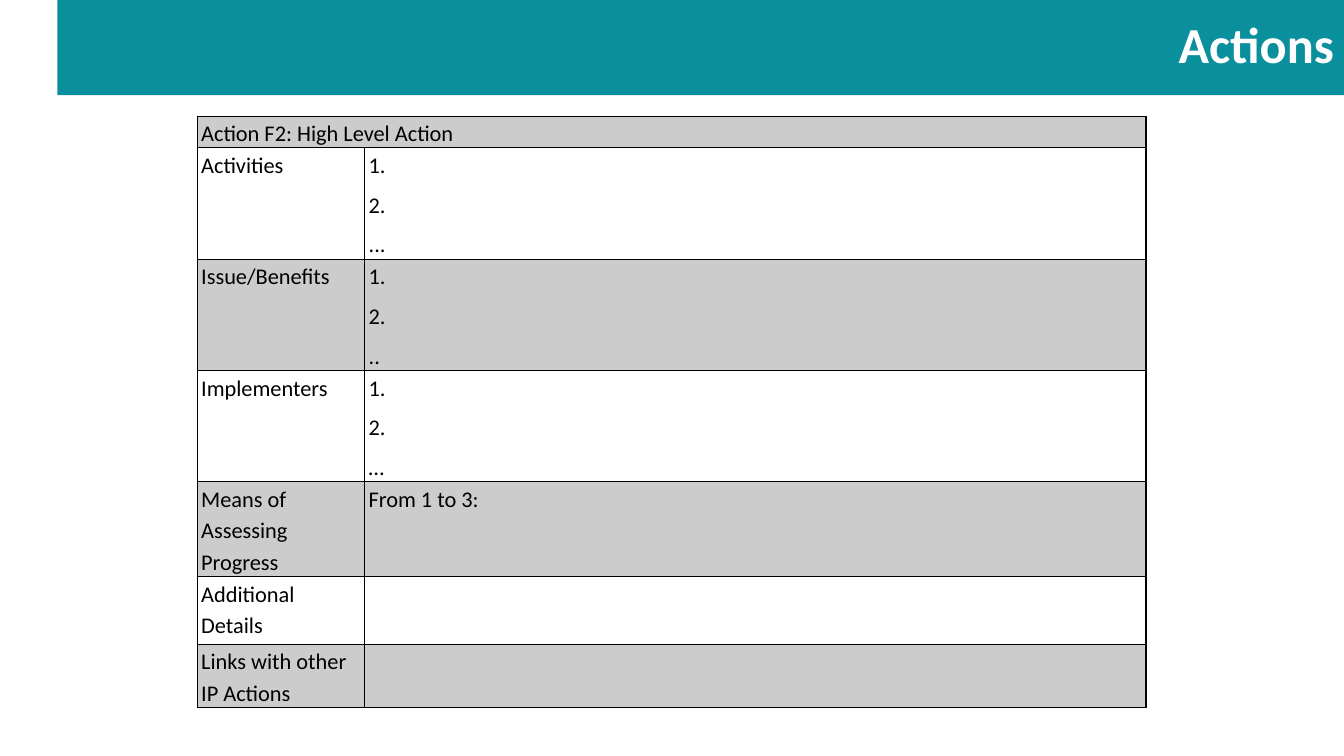
from dataclasses import dataclass

from lxml.etree import SubElement
from pptx import Presentation
from pptx.dml.color import RGBColor
from pptx.enum.shapes import MSO_SHAPE
from pptx.enum.text import MSO_ANCHOR, PP_ALIGN
from pptx.oxml.ns import qn
from pptx.util import Cm, Pt


@dataclass(frozen=True)
class Theme:
    font: str = "Calibri"
    banner: str = "0A8F9D"
    title: str = "FFFFFF"
    ink: str = "000000"
    shade_opacity: int = 20
    title_size: int = 36
    body_size: int = 16
    border_width: int = 1


@dataclass(frozen=True)
class Entry:
    lines: tuple = ()
    align: PP_ALIGN = PP_ALIGN.JUSTIFY
    before: int = 3
    after: int = 3


def label(text):
    return Entry((text,), PP_ALIGN.LEFT, after=0)


class SlideBuilder:
    def __init__(self, slide, theme):
        self.slide = slide
        self.theme = theme

    def add_run(self, paragraph, text, size, color, bold=False):
        run = paragraph.add_run()
        run.text = text
        run.font.name = self.theme.font
        run.font.size = Pt(size)
        run.font.bold = bold
        run.font.color.rgb = RGBColor.from_string(color)

    def add_banner(self, text, left, top, width, height):
        shape = self.slide.shapes.add_shape(
            MSO_SHAPE.RECTANGLE, Cm(left), Cm(top), Cm(width), Cm(height))
        shape.shadow.inherit = False
        shape.fill.solid()
        shape.fill.fore_color.rgb = RGBColor.from_string(self.theme.banner)
        shape.line.fill.background()
        shape.text_frame.vertical_anchor = MSO_ANCHOR.MIDDLE
        paragraph = shape.text_frame.paragraphs[0]
        paragraph.alignment = PP_ALIGN.RIGHT
        paragraph.line_spacing = 0.9
        self.add_run(paragraph, text, self.theme.title_size, self.theme.title, True)

    def add_borders(self, cell):
        properties = cell._tc.get_or_add_tcPr()
        for side in ("a:lnL", "a:lnR", "a:lnT", "a:lnB"):
            line = SubElement(properties, qn(side), w=str(Pt(self.theme.border_width)))
            fill = SubElement(line, qn("a:solidFill"))
            SubElement(fill, qn("a:srgbClr"), val=self.theme.ink)

    def fill_cell(self, cell, shaded):
        if not shaded:
            cell.fill.background()
            return
        cell.fill.solid()
        cell.fill.fore_color.rgb = RGBColor.from_string(self.theme.ink)
        color = cell._tc.tcPr.find(qn("a:solidFill")).find(qn("a:srgbClr"))
        SubElement(color, qn("a:alpha"), val=str(self.theme.shade_opacity * 1000))

    def write_cell(self, cell, entry):
        frame = cell.text_frame
        for index, text in enumerate(entry.lines):
            paragraph = frame.add_paragraph() if index else frame.paragraphs[0]
            paragraph.alignment = entry.align
            paragraph.line_spacing = 1.15
            paragraph.space_before = Pt(entry.before)
            paragraph.space_after = Pt(entry.after)
            self.add_run(paragraph, text, self.theme.body_size, self.theme.ink)

    def add_table(self, rows, left, top, widths, heights):
        table = self.slide.shapes.add_table(
            len(rows), len(widths), Cm(left), Cm(top),
            Cm(sum(widths)), Cm(sum(heights))).table
        table.first_row = False
        table.horz_banding = False
        for column, width in zip(table.columns, widths):
            column.width = Cm(width)
        for row, height in zip(table.rows, heights):
            row.height = Cm(height)
        for row_index, entries in enumerate(rows):
            for column_index, entry in enumerate(entries):
                cell = table.cell(row_index, column_index)
                cell.margin_left = cell.margin_right = Cm(0.1)
                cell.margin_top = cell.margin_bottom = Cm(0)
                self.add_borders(cell)
                self.fill_cell(cell, shaded=row_index % 2 == 0)
                self.write_cell(cell, entry)
        table.cell(0, 0).merge(table.cell(0, len(widths) - 1))


ACTION_ROWS = [
    (Entry(("Action F2: High Level Action",)), Entry()),
    (label("Activities"), Entry(("1.", "2.", "..."), before=6, after=0)),
    (label("Issue/Benefits"), Entry(("1.", "2.", ".."))),
    (label("Implementers"), Entry(("1.", "2.", "…"))),
    (label("Means of Assessing Progress"), Entry(("From 1 to 3: ",))),
    (label("Additional Details"), Entry()),
    (label("Links with other IP Actions"), Entry()),
]


def main():
    presentation = Presentation()
    presentation.slide_width = Cm(33.87)
    presentation.slide_height = Cm(19.05)
    slide = presentation.slides.add_slide(presentation.slide_layouts[6])
    builder = SlideBuilder(slide, Theme())
    builder.add_banner("Actions", 1.45, 0, 32.42, 2.4)
    builder.add_table(
        ACTION_ROWS, 4.97, 2.93, widths=(4.22, 19.69),
        heights=(0.79, 2.81, 2.8, 2.8, 2.39, 1.7, 1.59))
    presentation.save("out.pptx")


if __name__ == "__main__":
    main()
